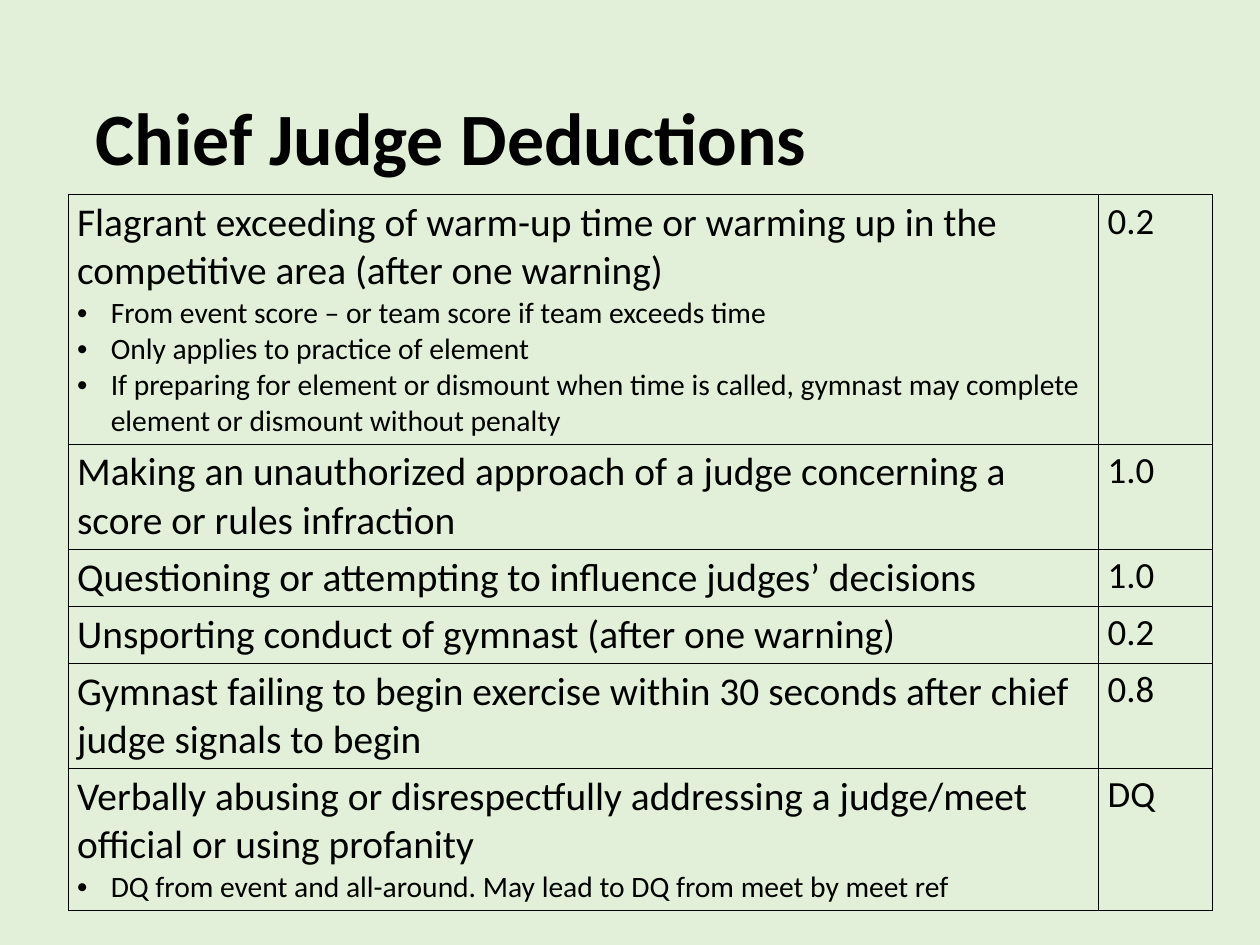
from dataclasses import dataclass

from lxml import etree
from pptx import Presentation
from pptx.dml.color import RGBColor
from pptx.enum.text import MSO_ANCHOR, MSO_AUTO_SIZE, PP_ALIGN
from pptx.oxml.ns import qn
from pptx.util import Inches, Pt

LEFT = PP_ALIGN.LEFT
MIDDLE = MSO_ANCHOR.MIDDLE
NO_AUTOFIT = MSO_AUTO_SIZE.NONE
TITLE_ONLY = 5


@dataclass(frozen=True)
class Theme:
    font: str = "Calibri"
    background: str = "E2F0D9"
    ink: str = "000000"
    title: int = 60
    rule: int = 32
    detail: int = 24
    value: int = 30
    border: int = 1


THEME = Theme()
COLUMN_WIDTHS = (11.63, 1.28)
BULLET_INDENT = 0.38

# Rule, details, deduction, row height in inches
DEDUCTIONS = [
    ("Flagrant exceeding of warm-up time or warming up in the competitive area (after one warning)",
     ["From event score – or team score if team exceeds time",
      "Only applies to practice of element",
      "If preparing for element or dismount when time is called, gymnast may complete "
      "element or dismount without penalty"],
     "0.2", 2.81),
    ("Making an unauthorized approach of a judge concerning a score or rules infraction",
     [], "1.0", 1.18),
    ("Questioning or attempting to influence judges’ decisions", [], "1.0", 0.64),
    ("Unsporting conduct of gymnast (after one warning)", [], "0.2", 0.64),
    ("Gymnast failing to begin exercise within 30 seconds after chief judge signals to begin",
     [], "0.8", 1.18),
    ("Verbally abusing or disrespectfully addressing a judge/meet official or using profanity",
     ["DQ from event and all-around. May lead to DQ from meet by meet ref"],
     "DQ", 1.6),
]


def write_paragraph(p, text, size, bold=False):
    p.text = text
    p.alignment = LEFT
    for r in p.runs:
        r.font.name = THEME.font
        r.font.size = Pt(size)
        r.font.bold = bold
        r.font.color.rgb = RGBColor.from_string(THEME.ink)


def add_bullet(p):
    pPr = p._p.get_or_add_pPr()
    pPr.set("marL", str(Inches(BULLET_INDENT)))
    pPr.set("indent", str(-Inches(BULLET_INDENT)))
    etree.SubElement(pPr, qn("a:buFont"), typeface="Arial")
    etree.SubElement(pPr, qn("a:buChar"), char="•")


def style_cell(cell):
    """Outline all four sides and let the background show through."""
    tcPr = cell._tc.get_or_add_tcPr()
    for side in ("lnL", "lnR", "lnT", "lnB"):
        ln = etree.SubElement(tcPr, qn(f"a:{side}"), w=str(Pt(THEME.border)))
        fill = etree.SubElement(ln, qn("a:solidFill"))
        etree.SubElement(fill, qn("a:srgbClr"), val=THEME.ink)
    cell.fill.background()


def format_title(s, text):
    title = s.shapes.title
    title.left, title.top = Inches(0.98), Inches(0.57)
    title.width, title.height = Inches(12.27), Inches(2.06)
    tf = title.text_frame
    tf.word_wrap = True
    tf.auto_size = NO_AUTOFIT
    tf.vertical_anchor = MIDDLE
    p = tf.paragraphs[0]
    write_paragraph(p, text, THEME.title, bold=True)
    p.line_spacing = 0.9


def add_deductions_table(s):
    height = sum(row[-1] for row in DEDUCTIONS)
    table = s.shapes.add_table(
        len(DEDUCTIONS), len(COLUMN_WIDTHS), Inches(0.77), Inches(2.2),
        Inches(sum(COLUMN_WIDTHS)), Inches(height)).table
    table.first_row = False
    table.horz_banding = False
    for column, width in zip(table.columns, COLUMN_WIDTHS):
        column.width = Inches(width)
    for row, (rule, details, value, row_height) in zip(table.rows, DEDUCTIONS):
        row.height = Inches(row_height)
        rule_cell, value_cell = row.cells
        tf = rule_cell.text_frame
        write_paragraph(tf.paragraphs[0], rule, THEME.rule)
        for detail in details:
            p = tf.add_paragraph()
            write_paragraph(p, detail, THEME.detail)
            add_bullet(p)
        write_paragraph(value_cell.text_frame.paragraphs[0], value, THEME.value)
        for cell in row.cells:
            style_cell(cell)


def main():
    prs = Presentation()
    prs.slide_width, prs.slide_height = Inches(14.22), Inches(10.67)
    s = prs.slides.add_slide(prs.slide_layouts[TITLE_ONLY])
    s.background.fill.solid()
    s.background.fill.fore_color.rgb = RGBColor.from_string(THEME.background)
    format_title(s, "Chief Judge Deductions")
    add_deductions_table(s)
    prs.save("out.pptx")


if __name__ == "__main__":
    main()
